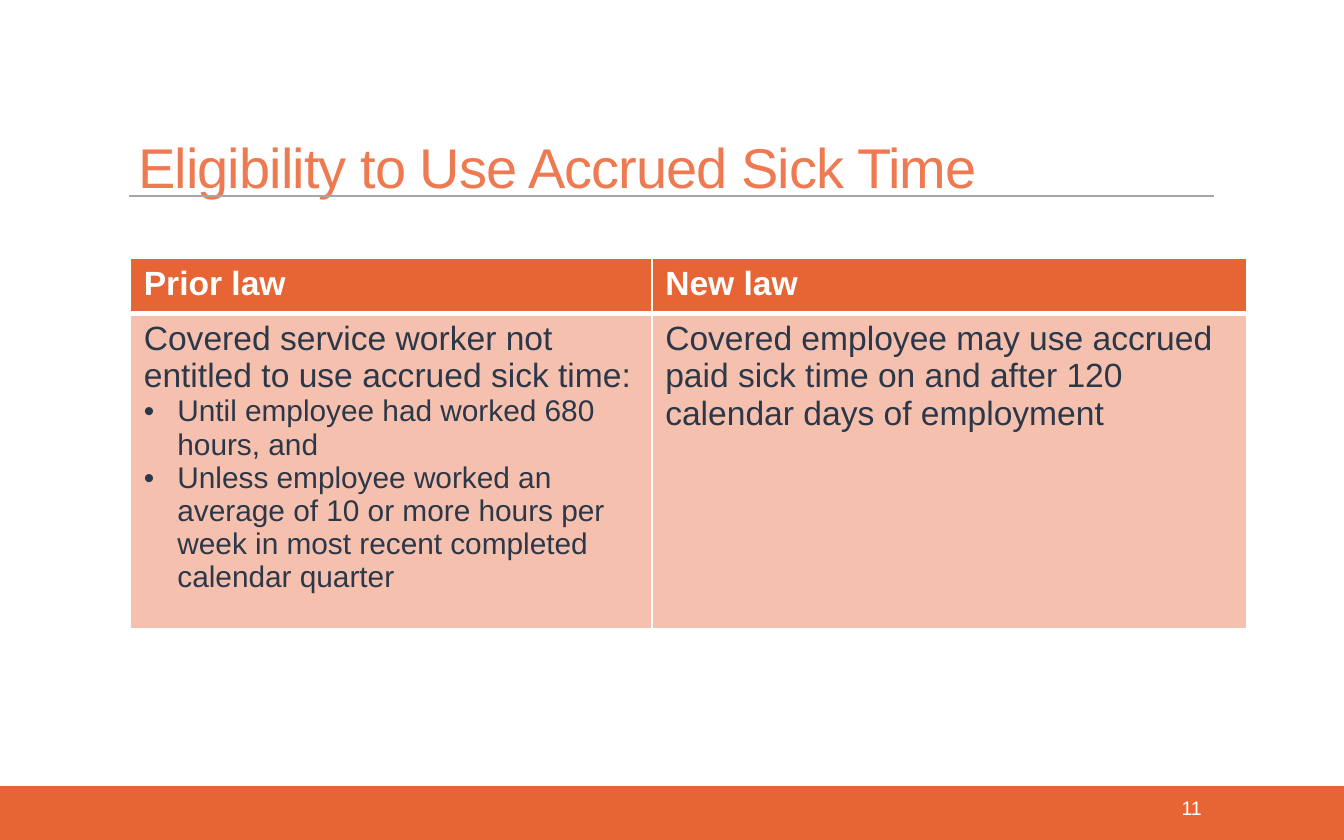
from dataclasses import dataclass

from lxml.etree import SubElement
from pptx import Presentation
from pptx.dml.color import RGBColor
from pptx.enum.shapes import MSO_CONNECTOR as Connector, MSO_SHAPE as Shape
from pptx.enum.text import MSO_ANCHOR as Anchor, PP_ALIGN as Align
from pptx.oxml.ns import qn
from pptx.util import Inches, Pt


@dataclass(frozen=True)
class Theme:
    font: str = "Arial"
    accent: str = "E76434"
    title: str = "EE7A52"
    tint: str = "F5C1AE"
    text: str = "2C3849"
    rule: str = "A6A6A6"
    white: str = "FFFFFF"
    title_size: float = 30
    body_size: float = 18
    bullet_size: float = 16
    number_size: float = 10.5


THEME = Theme()
TITLE = "Eligibility to Use Accrued Sick Time"
# Each column: heading, statement, bullets
COLUMNS = [
    ("Prior law",
     "Covered service worker not entitled to use accrued sick time:",
     ["Until employee had worked 680 hours, and",
      "Unless employee worked an average of 10 or more hours per week "
      "in most recent completed calendar quarter"]),
    ("New law",
     "Covered employee may use accrued paid sick time on and after 120 "
     "calendar days of employment",
     []),
]


def color(value):
    return RGBColor.from_string(value)


def set_attributes(target, values):
    for name, value in values.items():
        setattr(target, name, value)


def write(paragraph, text, size, ink, bold=False):
    run = paragraph.add_run()
    run.text = text
    set_attributes(run.font, {"name": THEME.font, "size": Pt(size), "bold": bold})
    run.font.color.rgb = color(ink)
    return run


def add_bullet(paragraph, indent):
    paragraph.level = 1
    properties = paragraph._p.get_or_add_pPr()
    properties.set("marL", str(indent))
    properties.set("indent", str(-indent))
    SubElement(properties, qn("a:buFont"), typeface=THEME.font)
    SubElement(properties, qn("a:buChar"), char="•")


def set_borders(cell, widths):
    """Draw white cell borders; widths maps a side (L, R, T, B) to points."""
    properties = cell._tc.get_or_add_tcPr()
    for position, (side, width) in enumerate(widths.items()):
        line = properties.makeelement(qn(f"a:ln{side}"), {"w": str(Pt(width))})
        fill = SubElement(line, qn("a:solidFill"))
        SubElement(fill, qn("a:srgbClr"), val=THEME.white)
        properties.insert(position, line)


def place_title(slide, left, top, width, height):
    title = slide.shapes.title
    set_attributes(title, {"left": left, "top": top, "width": width, "height": height})
    frame = title.text_frame
    set_attributes(frame, {
        "word_wrap": True, "vertical_anchor": Anchor.TOP,
        "margin_left": Inches(0.1), "margin_right": Inches(0.1),
        "margin_top": Inches(0.09), "margin_bottom": 0,
    })
    paragraph = frame.paragraphs[0]
    set_attributes(paragraph, {"alignment": Align.LEFT, "line_spacing": 0.85})
    run = write(paragraph, TITLE, THEME.title_size, THEME.title)
    run.font._element.set("spc", "-50")

    # Rule under the title
    rule_left, rule_top = left + Inches(0.03), top + Inches(0.49)
    rule = slide.shapes.add_connector(
        Connector.STRAIGHT, rule_left, rule_top, left + width, rule_top)
    rule.line.color.rgb = color(THEME.rule)
    rule.line.width = Pt(1)
    SubElement(rule._element.spPr, qn("a:effectLst"))


def place_comparison(slide, left, top, width, height):
    header_height, first_width = Inches(0.41), Inches(3.88)
    table = slide.shapes.add_table(
        2, len(COLUMNS), left, top, width, height).table
    table.horz_banding = False
    table.columns[0].width = first_width
    table.columns[1].width = width - first_width
    table.rows[0].height = header_height
    table.rows[1].height = height - header_height

    for index, (heading, statement, bullets) in enumerate(COLUMNS):
        header, body = table.cell(0, index), table.cell(1, index)
        write(header.text_frame.paragraphs[0], heading,
              THEME.body_size, THEME.white, bold=True)
        write(body.text_frame.paragraphs[0], statement,
              THEME.body_size, THEME.text)
        for bullet in bullets:
            paragraph = body.text_frame.add_paragraph()
            add_bullet(paragraph, Inches(0.25))
            write(paragraph, bullet, THEME.bullet_size, THEME.text)

        for cell, fill, top_line, bottom_line in (
                (header, THEME.accent, 1, 3), (body, THEME.tint, 3, 1)):
            cell.fill.solid()
            cell.fill.fore_color.rgb = color(fill)
            set_borders(cell, {"L": 1, "R": 1, "T": top_line, "B": bottom_line})


def place_footer(slide, left, top, width, height):
    band = slide.shapes.add_shape(Shape.RECTANGLE, left, top, width, height)
    band.shadow.inherit = False
    band.fill.solid()
    band.fill.fore_color.rgb = color(THEME.accent)
    band.line.fill.background()

    # Slide number
    number = slide.shapes.add_textbox(
        left + Inches(7.96), top + Inches(0.02), Inches(1.08), Inches(0.33))
    number.text_frame.word_wrap = True
    paragraph = number.text_frame.paragraphs[0]
    paragraph.alignment = Align.RIGHT
    write(paragraph, "11", THEME.number_size, THEME.white)


def main():
    presentation = Presentation()
    set_attributes(presentation, {
        "slide_width": Inches(10), "slide_height": Inches(6.25)})
    slide = presentation.slides.add_slide(presentation.slide_layouts[5])
    slide.background.fill.solid()
    slide.background.fill.fore_color.rgb = color(THEME.white)

    place_footer(slide, 0, Inches(5.85), Inches(10), Inches(0.4))
    place_title(slide, Inches(0.93), Inches(0.97), Inches(8.1), Inches(0.39))
    place_comparison(slide, Inches(0.97), Inches(1.92), Inches(8.31), Inches(2.76))
    presentation.save("out.pptx")


if __name__ == "__main__":
    main()
